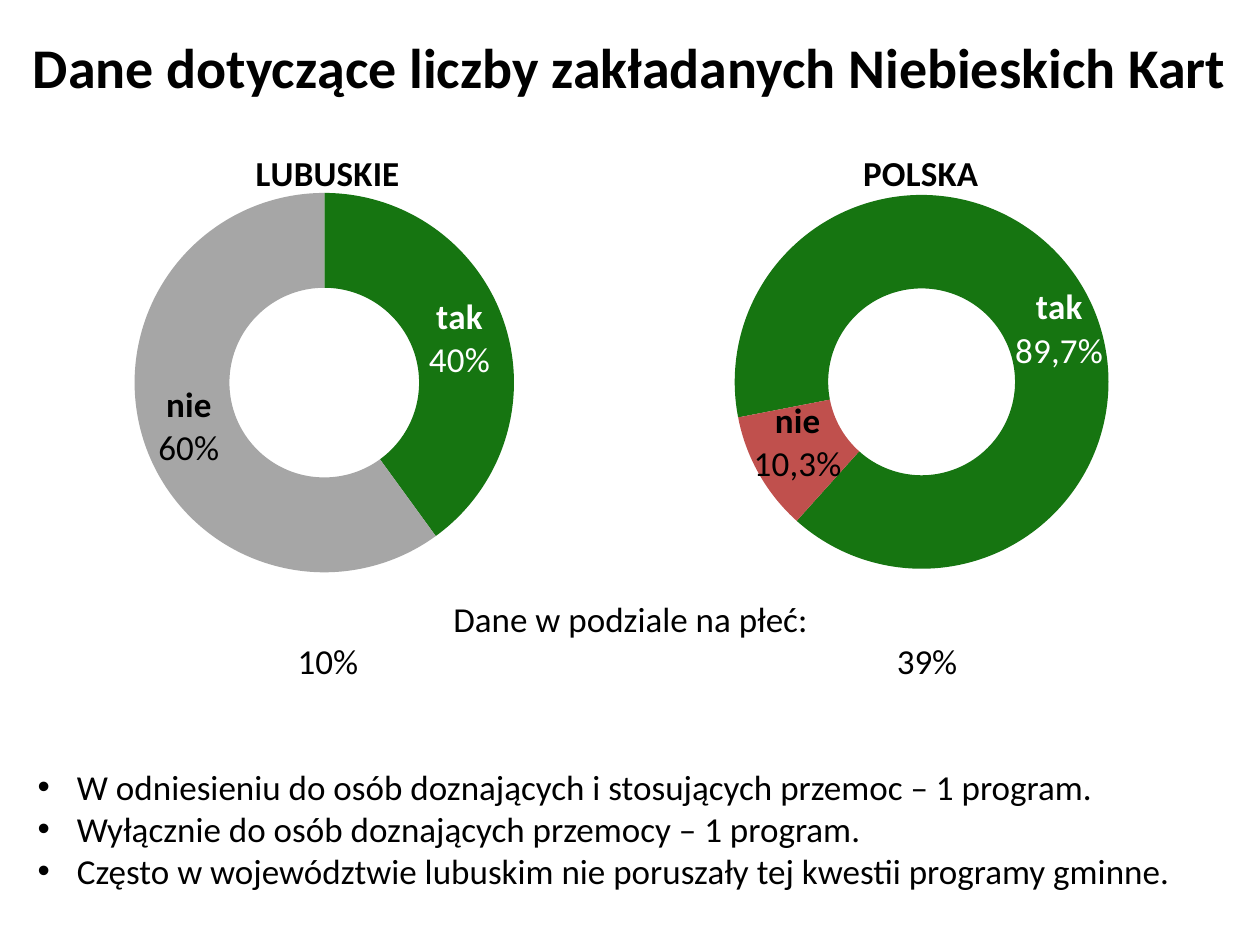
from lxml.etree import SubElement, fromstring
from pptx import Presentation
from pptx.chart.data import CategoryChartData
from pptx.dml.color import RGBColor
from pptx.enum.chart import XL_CHART_TYPE
from pptx.enum.text import PP_ALIGN
from pptx.oxml.ns import qn
from pptx.util import Pt

BLACK, WHITE = "000000", "FFFFFF"
GREEN, GREY, RED = "167511", "A6A6A6", "C0504D"
BASE = {"name": "Calibri", "size": Pt(20), "bold": False}
BOLD = {**BASE, "bold": True}
HEAD = {**BOLD, "size": Pt(32)}

NOTES = [
    "W odniesieniu do osób doznających i stosujących przemoc – 1 program.",
    "Wyłącznie do osób doznających przemocy – 1 program.",
    "Często w województwie lubuskim nie poruszały tej kwestii programy gminne.",
]
RINGS = [
    {"box": (48, 71.5, 278, 289.5), "title": "LUBUSKIE", "head": (0.34, 0.033),
     "plot": (0.104, 0.134, 0.78, 0.749), "start": 0, "format": "General",
     "show": "showPercent",
     "parts": [("tak", 40, "40%", GREEN, WHITE, None),
               ("nie", 60, "60%", GREY, BLACK, None)]},
    {"box": (345.6, 71.5, 360, 289.5), "title": "POLSKA", "head": (0.4, 0.033),
     "plot": (0.206, 0.138, 0.594, 0.738), "start": 259, "format": "0.0%",
     "show": "showVal",
     "parts": [("tak", 0.897, "89,7%", GREEN, WHITE, (0.025, 0.032)),
               ("nie", 0.103, "10,3%", RED, BLACK, (-0.003, -0.017))]},
]


def color(code):
    return RGBColor.from_string(code)


def style(font, form, code=BLACK):
    for key, value in form.items():
        setattr(font, key, value)
    font.color.rgb = color(code)


def write(par, text, form, code=BLACK):
    run = par.add_run()
    run.text = text
    style(run.font, form, code)


def frame(slide, box):
    text = slide.shapes.add_textbox(*map(Pt, box)).text_frame
    text.word_wrap = True
    return text


def layout(values, edge=False, inner=False):
    """Manual chart layout in fractions of the chart area."""
    uri = qn("c:layout")[1:].split("}")[0]
    node = fromstring(f'<c:layout xmlns:c="{uri}"><c:manualLayout/></c:layout>')
    if inner:
        SubElement(node[0], qn("c:layoutTarget")).set("val", "inner")
    if edge:
        for axis in "xy":
            SubElement(node[0], qn(f"c:{axis}Mode")).set("val", "edge")
    for key, value in zip("xywh", values):
        SubElement(node[0], qn(f"c:{key}")).set("val", str(value))
    return node


def place(parent, node, after=None):
    """Put a layout in its parent, instead of any layout already there."""
    for old in parent.findall(qn("c:layout")):
        parent.remove(old)
    if after is None:
        parent.insert(0, node)
    else:
        parent.find(qn(after)).addnext(node)


def heading(slide, box):
    par = frame(slide, box).paragraphs[0]
    par.alignment = PP_ALIGN.CENTER
    write(par, "Dane dotyczące liczby zakładanych Niebieskich Kart", HEAD)


def ring(slide, item):
    data = CategoryChartData(number_format=item["format"])
    data.categories = [part[0] for part in item["parts"]]
    data.add_series("Series 1", [part[1] for part in item["parts"]])
    chart = slide.shapes.add_chart(
        XL_CHART_TYPE.DOUGHNUT, *map(Pt, item["box"]), data).chart
    style(chart.font, {**BASE, "size": Pt(10)})
    chart.has_legend = False

    # Title above the ring
    chart.has_title = True
    title = chart.chart_title
    write(title.text_frame.paragraphs[0], item["title"], BOLD)
    title.include_in_layout = False
    place(title._element, layout(item["head"], edge=True), "c:tx")

    # Ring size and turn
    area = chart._chartSpace.chart.plotArea
    place(area, layout(item["plot"], edge=True, inner=True))
    kind = area.find(qn("c:doughnutChart"))
    for tag, value in (("c:firstSliceAng", item["start"]), ("c:holeSize", 50)):
        node = kind.find(qn(tag))
        if node is None:
            node = SubElement(kind, qn(tag))
        node.set("val", str(value))

    # Slices with two-line labels
    plot = chart.plots[0]
    plot.vary_by_categories = True
    series = plot.series[0]
    labels = series.data_labels
    style(labels.font, BASE)
    if item["format"] != "General":
        labels.number_format = item["format"]
        labels.number_format_is_linked = False
    for i, (name, _, share, fill, ink, shift) in enumerate(item["parts"]):
        point = series.points[i]
        point.format.fill.solid()
        point.format.fill.fore_color.rgb = color(fill)
        point.format.line.fill.background()
        text = point.data_label.text_frame
        write(text.paragraphs[0], name, BOLD, ink)
        write(text.add_paragraph(), share, BASE, ink)
        if shift:
            place(text._txBody.getparent().getparent(), layout(shift), "c:idx")

    # Category and share in every label
    for tag in ("showVal", "showCatName", "showPercent"):
        for node in series._element.iter(qn(f"c:{tag}")):
            node.set("val", str(int(tag in ("showCatName", item["show"]))))


def summary(slide, box):
    text = frame(slide, box)
    par = text.paragraphs[0]
    par.alignment = PP_ALIGN.CENTER
    write(par, "Dane w podziale na płeć:", BASE)

    # Shares centred under the rings
    par = text.add_paragraph()
    write(par, "\t10%\t39%", BASE)
    tabs = SubElement(par._p.get_or_add_pPr(), qn("a:tabLst"))
    for stop in (166, 508.3):
        tab = SubElement(tabs, qn("a:tab"))
        tab.set("pos", str(int(Pt(stop))))
        tab.set("algn", "ctr")

    # Bulleted notes
    for i, note in enumerate(NOTES):
        par = text.add_paragraph()
        par.space_before = Pt(0 if i else 48)
        write(par, note, BASE)
        props = par._p.get_or_add_pPr()
        props.set("marL", str(int(Pt(22.5))))
        props.set("indent", str(int(Pt(-22.5))))
        SubElement(props, qn("a:buFont")).set("typeface", "Arial")
        SubElement(props, qn("a:buChar")).set("char", "•")


def main():
    deck = Presentation()
    deck.slide_width, deck.slide_height = Pt(720), Pt(540)
    slide = deck.slides.add_slide(deck.slide_layouts[6])
    heading(slide, (0, 15, 720, 46))
    summary(slide, (14.4, 337.7, 692, 177))
    for item in RINGS:
        ring(slide, item)
    deck.save("out.pptx")


if __name__ == "__main__":
    main()
